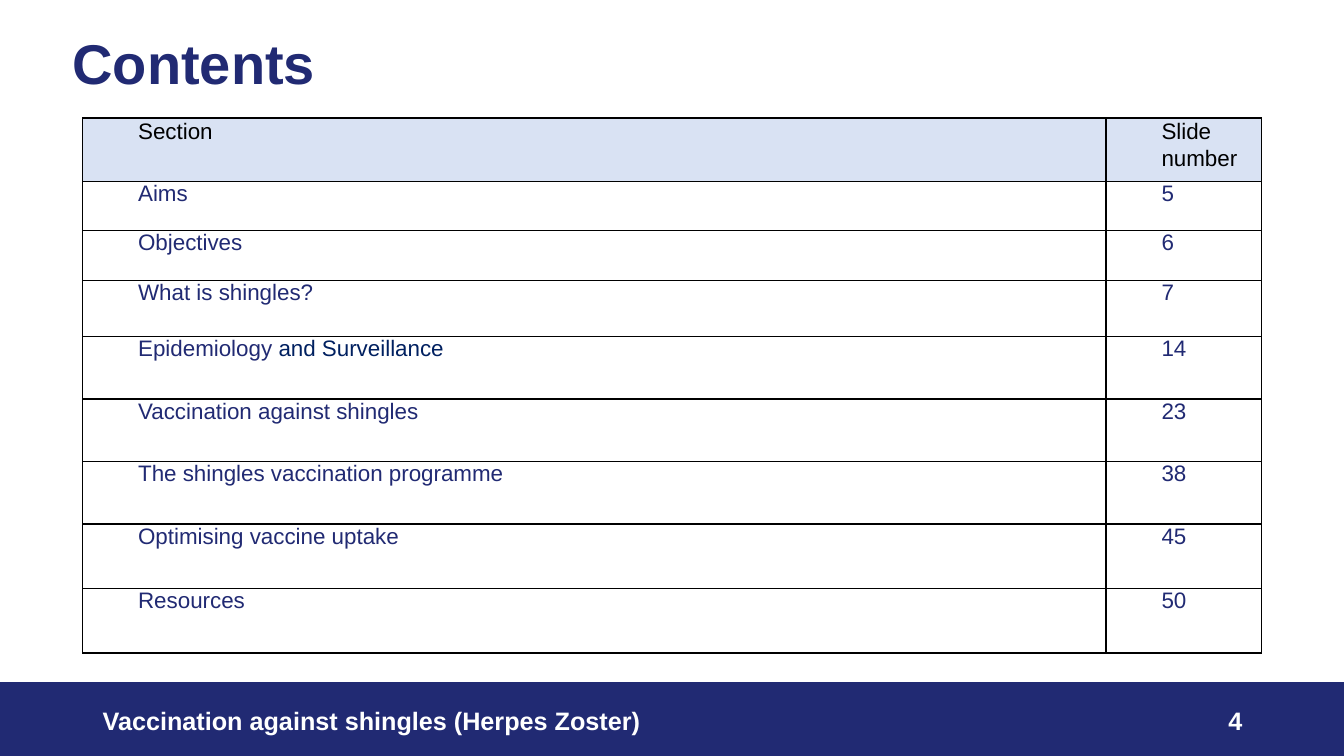
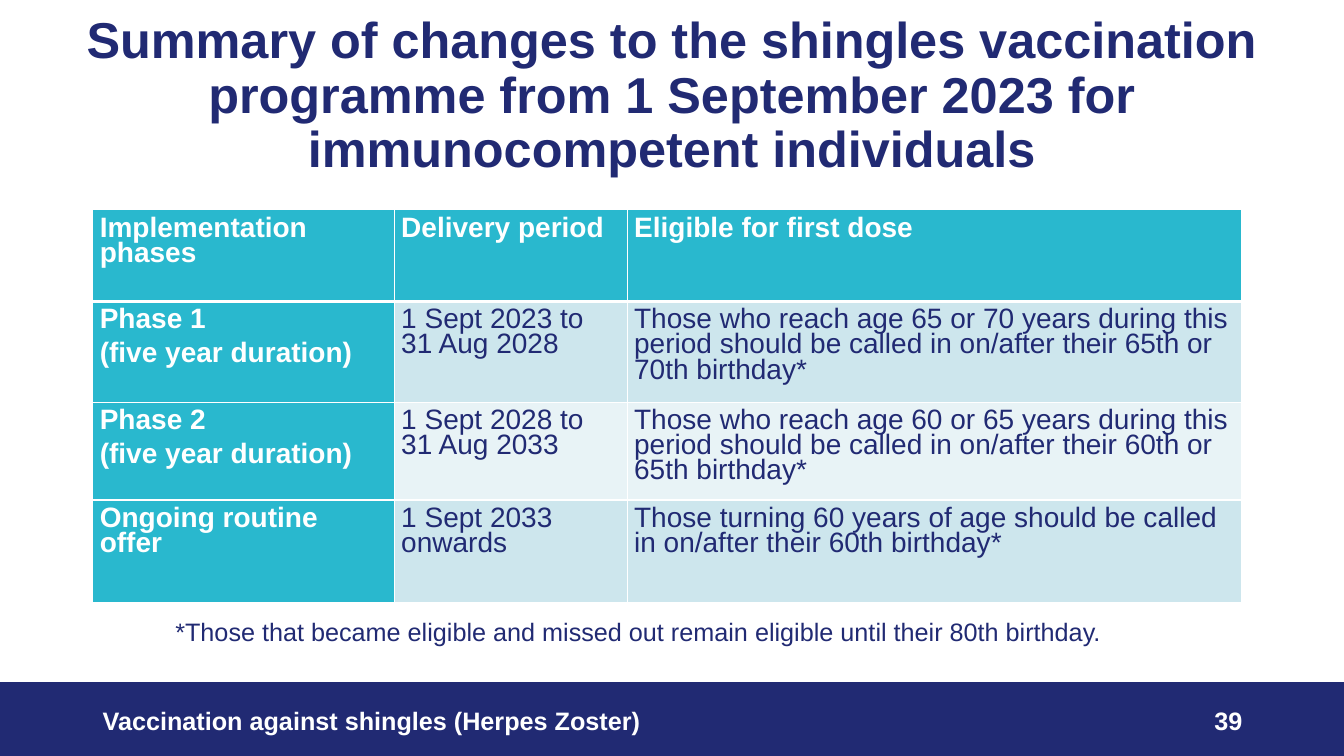
from dataclasses import dataclass

from lxml.etree import SubElement
from pptx import Presentation
from pptx.dml.color import RGBColor
from pptx.enum.shapes import MSO_SHAPE as Preset
from pptx.enum.text import MSO_ANCHOR as Anchor, PP_ALIGN as Align
from pptx.oxml.ns import qn
from pptx.util import Inches, Pt

COLOURS = {
    "navy": "212A73",
    "deep_blue": "002060",
    "white": "FFFFFF",
    "black": "000000",
    "pale_blue": "D9E2F3",
    "teal": "29B8CE",
    "light_teal": "CDE6ED",
    "lightest_teal": "E8F3F6",
}
FONT = "Arial"
FOOTER = "Vaccination against shingles (Herpes Zoster)"
SLIDE_WIDTH, SLIDE_HEIGHT = 13.33, 7.5
BAND_HEIGHT = 0.73

CONTENTS = [
    ("Section", "Slide number"),
    ("Aims", "5"),
    ("Objectives", "6"),
    ("What is shingles?", "7"),
    ("Epidemiology ", "14"),
    ("Vaccination against shingles", "23"),
    ("The shingles vaccination programme", "38"),
    ("Optimising vaccine uptake", "45"),
    ("Resources", "50"),
]
CHANGES = [
    ("Implementation phases", "Delivery period", "Eligible for first dose"),
    ("Phase 1\n(five year duration)", "1 Sept 2023 to 31 Aug 2028",
     "Those who reach age 65 or 70 years during this period should be called in "
     "on/after their 65th or 70th birthday*"),
    ("Phase 2\n(five year duration)", "1 Sept 2028 to 31 Aug 2033",
     "Those who reach age 60 or 65 years during this period should be called in "
     "on/after their 60th or 65th birthday*"),
    ("Ongoing routine offer", "1 Sept 2033 onwards",
     "Those turning 60 years of age should be called in on/after their 60th birthday*"),
]


@dataclass
class CellStyle:
    """Look of one table cell."""

    size: int
    colour: str
    fill: str | None
    border: str
    margins: tuple
    bold: bool = False
    indent: float = 0
    line_spacing: object = None
    space_after: int = 0
    top_width: int = 1
    bottom_width: int = 1


def rgb(name):
    """Return the named colour."""
    return RGBColor.from_string(COLOURS[name])


def format_run(run, size, colour, bold=False):
    """Set the font of a run."""
    run.font.name = FONT
    run.font.size = Pt(size)
    run.font.bold = bold
    run.font.color.rgb = rgb(colour)


def place(shape, box):
    """Move a shape to a box of left, top, width and height."""
    shape.left, shape.top, shape.width, shape.height = map(Inches, box)


def add_text(slide, box, text, colour, bold=False, align=Align.LEFT):
    """Add an 18 point line of text in the given box."""
    frame = slide.shapes.add_textbox(*map(Inches, box)).text_frame
    frame.word_wrap = True
    frame.vertical_anchor = Anchor.MIDDLE
    frame.text = text
    paragraph = frame.paragraphs[0]
    paragraph.alignment = align
    format_run(paragraph.runs[0], 18, colour, bold)


def add_footer(slide, box, number):
    """Add the footer band with the deck name and slide number."""
    left, top, width, height = box
    band = slide.shapes.add_shape(Preset.RECTANGLE, *map(Inches, box))
    band.shadow.inherit = False
    band.fill.solid()
    band.fill.fore_color.rgb = rgb("navy")
    band.line.color.rgb = rgb("navy")
    band.line.width = Pt(1)
    text_top = top + 0.18
    add_text(slide, (left + 0.92, text_top, 8, 0.4), FOOTER, "white", True)
    add_text(slide, (left + width - 3.91, text_top, 3, 0.4), number, "white", True, Align.RIGHT)


def set_title(slide, box, text, size, align):
    """Place and format the title placeholder."""
    title = slide.shapes.title
    place(title, box)
    frame = title.text_frame
    frame.word_wrap = True
    frame.vertical_anchor = Anchor.TOP
    frame.text = text
    paragraph = frame.paragraphs[0]
    paragraph.alignment = align
    paragraph.line_spacing = 0.9
    format_run(paragraph.runs[0], size, "navy", True)


def add_border(cell, side, colour, width):
    """Draw one side of a cell's border."""
    properties = cell._tc.get_or_add_tcPr()
    line = SubElement(properties, qn(f"a:ln{side}"), w=str(Pt(width)))
    fill = SubElement(line, qn("a:solidFill"))
    SubElement(fill, qn("a:srgbClr"), val=COLOURS[colour])


def fill_cell(cell, text, style):
    """Write and format one table cell."""
    widths = {"L": 1, "R": 1, "T": style.top_width, "B": style.bottom_width}
    for side, width in widths.items():
        add_border(cell, side, style.border, width)
    if style.fill:
        cell.fill.solid()
        cell.fill.fore_color.rgb = rgb(style.fill)
    else:
        cell.fill.background()
    horizontal, vertical = map(Inches, style.margins)
    cell.margin_left = cell.margin_right = horizontal
    cell.margin_top = cell.margin_bottom = vertical
    cell.vertical_anchor = Anchor.TOP
    cell.text_frame.text = text
    for paragraph in cell.text_frame.paragraphs:
        paragraph.line_spacing = style.line_spacing
        paragraph.space_after = Pt(style.space_after)
        paragraph._p.get_or_add_pPr().set("marL", str(Inches(style.indent)))
        for run in paragraph.runs:
            format_run(run, style.size, style.colour, style.bold)


def add_table(slide, corner, widths, heights, rows, style_for):
    """Add a table whose cells are styled by row and column."""
    box = (*corner, sum(widths), sum(heights))
    table = slide.shapes.add_table(len(rows), len(widths), *map(Inches, box)).table
    table.first_row = table.horz_banding = False
    for column, width in zip(table.columns, widths):
        column.width = Inches(width)
    for row, height in zip(table.rows, heights):
        row.height = Inches(height)
    for row_index, texts in enumerate(rows):
        for column_index, text in enumerate(texts):
            style = style_for(row_index, column_index)
            fill_cell(table.cell(row_index, column_index), text, style)
    return table


def contents_style(row, column):
    """Return the style of a cell in the contents table."""
    header = row == 0
    return CellStyle(
        size=16, colour="black" if header else "navy", fill="pale_blue" if header else None,
        border="black", margins=(0.05, 0), indent=0.5, line_spacing=1.07 if header else None)


def changes_style(row, column):
    """Return the style of a cell in the programme changes table."""
    heading = row == 0 or column == 0
    band = "light_teal" if row % 2 else "lightest_teal"
    return CellStyle(
        size=20, colour="white" if heading else "navy", fill="teal" if heading else band,
        border="white", margins=(0.07, 0.08), bold=heading, line_spacing=Pt(18), space_after=6,
        top_width=3 if row == 1 else 1, bottom_width=3 if row == 0 else 1)


def start_slide(presentation, number):
    """Add a title-only slide with the shared footer."""
    slide = presentation.slides.add_slide(presentation.slide_layouts[5])
    add_footer(slide, (0, SLIDE_HEIGHT - BAND_HEIGHT, SLIDE_WIDTH, BAND_HEIGHT), number)
    return slide


def build_contents(presentation):
    """Build the contents slide."""
    slide = start_slide(presentation, "4")
    set_title(slide, (0.62, 0.31, 11.69, 0.8), "Contents", 40, Align.LEFT)
    heights = [0.63, 0.49, 0.49, 0.56, 0.62, 0.62, 0.62, 0.64, 0.64]
    table = add_table(slide, (0.82, 1.17), [10.15, 1.54], heights, CONTENTS, contents_style)
    surveillance = table.cell(4, 0).text_frame.paragraphs[0].add_run()
    surveillance.text = "and Surveillance"
    format_run(surveillance, 16, "deep_blue")


def build_changes(presentation):
    """Build the slide that sums up the programme changes."""
    slide = start_slide(presentation, "39")
    set_title(
        slide, (0.14, 0.1, 13.05, 1.98),
        "Summary of changes to the shingles vaccination programme from 1 September 2023 "
        "for immunocompetent individuals", 36, Align.CENTER)
    add_table(slide, (0.92, 2.08), [2.99, 2.31, 6.09], [0.91, 1, 0.97, 1.02],
              CHANGES, changes_style)
    add_text(
        slide, (1.64, 6.06, 10.61, 0.4),
        "*Those that became eligible and missed out remain eligible until their 80th birthday.",
        "navy")


def main():
    """Build and save the presentation."""
    presentation = Presentation()
    presentation.slide_width = Inches(SLIDE_WIDTH)
    presentation.slide_height = Inches(SLIDE_HEIGHT)
    build_contents(presentation)
    build_changes(presentation)
    presentation.save("out.pptx")


if __name__ == "__main__":
    main()
